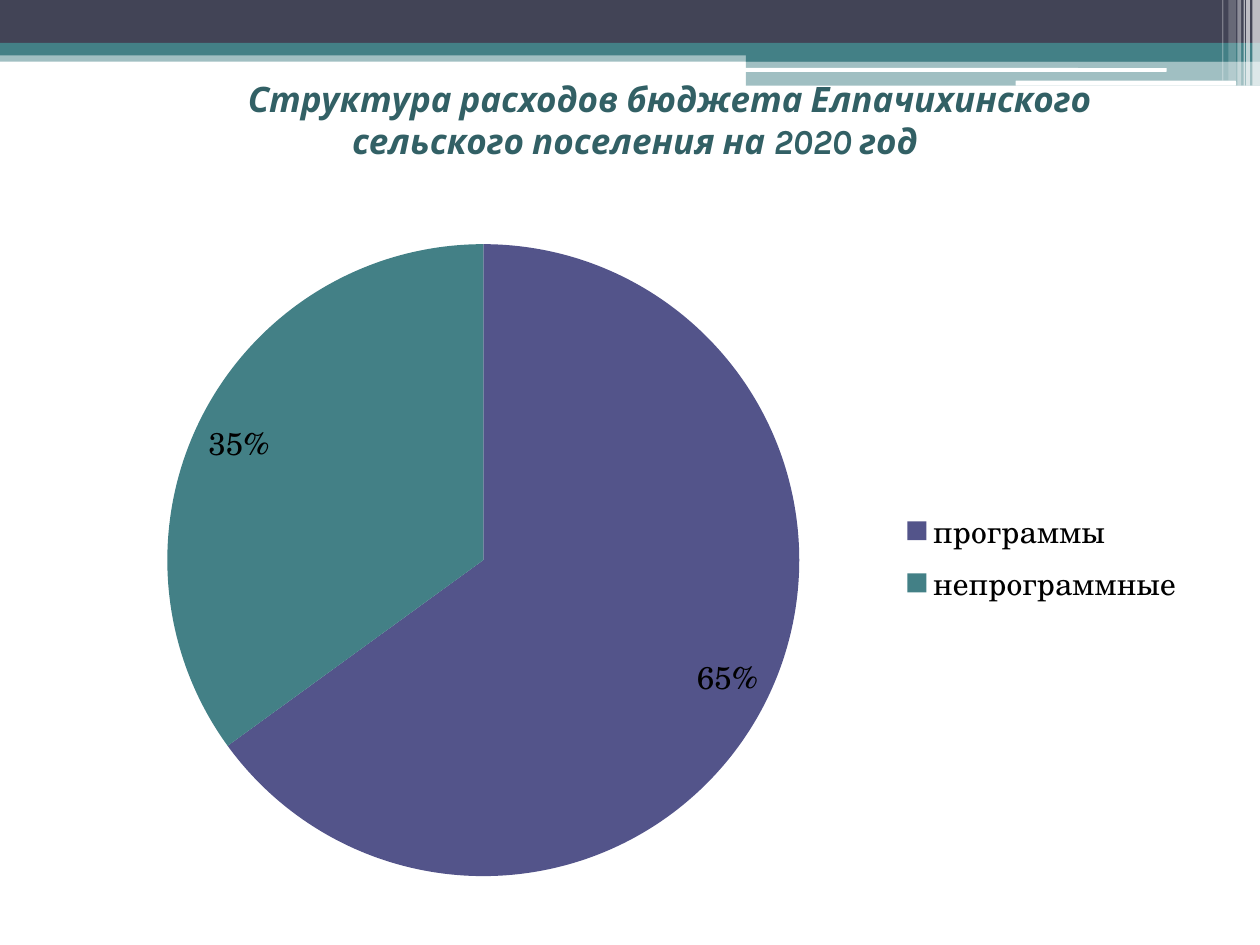
from lxml import etree
from pptx import Presentation
from pptx.chart.data import CategoryChartData
from pptx.dml.color import RGBColor
from pptx.enum.chart import XL_CHART_TYPE as ChartType, XL_LABEL_POSITION as LabelPosition, XL_LEGEND_POSITION as LegendPosition
from pptx.enum.shapes import MSO_SHAPE as Shape
from pptx.enum.text import MSO_ANCHOR as Anchor, PP_ALIGN as Align
from pptx.oxml import parse_xml
from pptx.oxml.ns import nsdecls, qn
from pptx.util import Inches, Pt

COLORS = {"dark": "424456", "teal": "438086", "white": "FFFFFF",
          "title": "326065", "violet": "53548A", "black": "000000"}
TITLE = "Структура расходов бюджета Елпачихинского сельского поселения на 2020 год"
SHARES = [("программы", 0.65, "violet"), ("непрограммные", 0.35, "teal")]
PIE_LAYOUT = {"x": 0.09, "y": 0.03, "w": 0.56, "h": 0.95}

BANDS = [
    (0, 0.4, 10, 0.09, "teal", 50),
    (0, 0, 10, 0.34, "dark", 100),
    (0, 0.34, 10, 0.1, "teal", 100),
    (5.92, 0.39, 4.08, 0.1, "teal", 100),
    (5.92, 0.48, 4.08, 0.2, "teal", 50),
]
PILLS = [(5.91, 0.54, 3.35, 0.03, "white", 100), (8.06, 0.64, 1.75, 0.04, "white", 100)]
STRIPES = [(left, 0, width, height, "white", alpha) for left, width, height, alpha in [
    (9.94, 0.06, 0.68, 65), (9.89, 0.03, 0.68, 65), (9.87, 0.01, 0.68, 60),
    (9.82, 0.03, 0.68, 40), (9.75, 0.06, 0.64, 20), (9.7, 0.01, 0.64, 30)]]


def rgb(name):
    return RGBColor.from_string(COLORS[name])


def add_block(slide, kind, left, top, width, height, color, alpha):
    shape = slide.shapes.add_shape(kind, *map(Inches, (left, top, width, height)))
    shape.shadow.inherit = False
    shape.line.fill.background()
    shape.fill.solid()
    shape.fill.fore_color.rgb = rgb(color)
    if alpha < 100:
        tint = shape.fill._xPr.find(".//" + qn("a:srgbClr"))
        etree.SubElement(tint, qn("a:alpha"), val=str(alpha * 1000))


def add_title(slide):
    box = slide.shapes.add_textbox(*map(Inches, (1.22, 0.44, 7.64, 1.02)))
    frame = box.text_frame
    frame.word_wrap = True
    frame.vertical_anchor = Anchor.MIDDLE
    paragraph = frame.paragraphs[0]
    paragraph.text = TITLE
    paragraph.alignment = Align.CENTER
    paragraph._p.get_or_add_pPr().set("indent", str(Inches(0.55)))
    font = paragraph.font
    font.name, font.size, font.bold, font.italic = "Karla", Pt(20), True, True
    font.color.rgb = rgb("title")


def add_pie(slide):
    data = CategoryChartData(number_format="0%")
    data.categories = [name for name, _, _ in SHARES]
    data.add_series("Series 1", [value for _, value, _ in SHARES])
    frame = slide.shapes.add_chart(ChartType.PIE, *map(Inches, (0.51, 1.78, 8.99, 5.28)), data)
    chart = frame.chart
    chart.has_title = False
    chart.font.name, chart.font.size = "TeX Gyre Schola", Pt(18)
    chart.font.color.rgb = rgb("black")
    chart.has_legend = True
    chart.legend.position = LegendPosition.RIGHT
    chart.legend.include_in_layout = False

    plot = chart.plots[0]
    plot.vary_by_categories = True
    plot.has_data_labels = True
    labels = plot.data_labels
    labels.show_value = True
    labels.number_format, labels.number_format_is_linked = "0%", False
    labels.position = LabelPosition.INSIDE_END
    for index, (_, _, color) in enumerate(SHARES):
        fill = plot.series[0].points[index].format.fill
        fill.solid()
        fill.fore_color.rgb = rgb(color)

    area = chart._chartSpace.find(".//" + qn("c:plotArea"))
    for layout in area.findall(qn("c:layout")):
        area.remove(layout)
    values = "".join(f'<c:{key} val="{value}"/>' for key, value in PIE_LAYOUT.items())
    area.insert(0, parse_xml(
        f'<c:layout {nsdecls("c")}><c:manualLayout><c:layoutTarget val="inner"/>'
        f'<c:xMode val="edge"/><c:yMode val="edge"/>{values}</c:manualLayout></c:layout>'))


presentation = Presentation()
presentation.slide_width, presentation.slide_height = Inches(10), Inches(7.5)
slide = presentation.slides.add_slide(presentation.slide_layouts[6])
for kind, blocks in [(Shape.RECTANGLE, BANDS), (Shape.ROUNDED_RECTANGLE, PILLS), (Shape.RECTANGLE, STRIPES)]:
    for block in blocks:
        add_block(slide, kind, *block)
add_title(slide)
add_pie(slide)
presentation.save("out.pptx")
